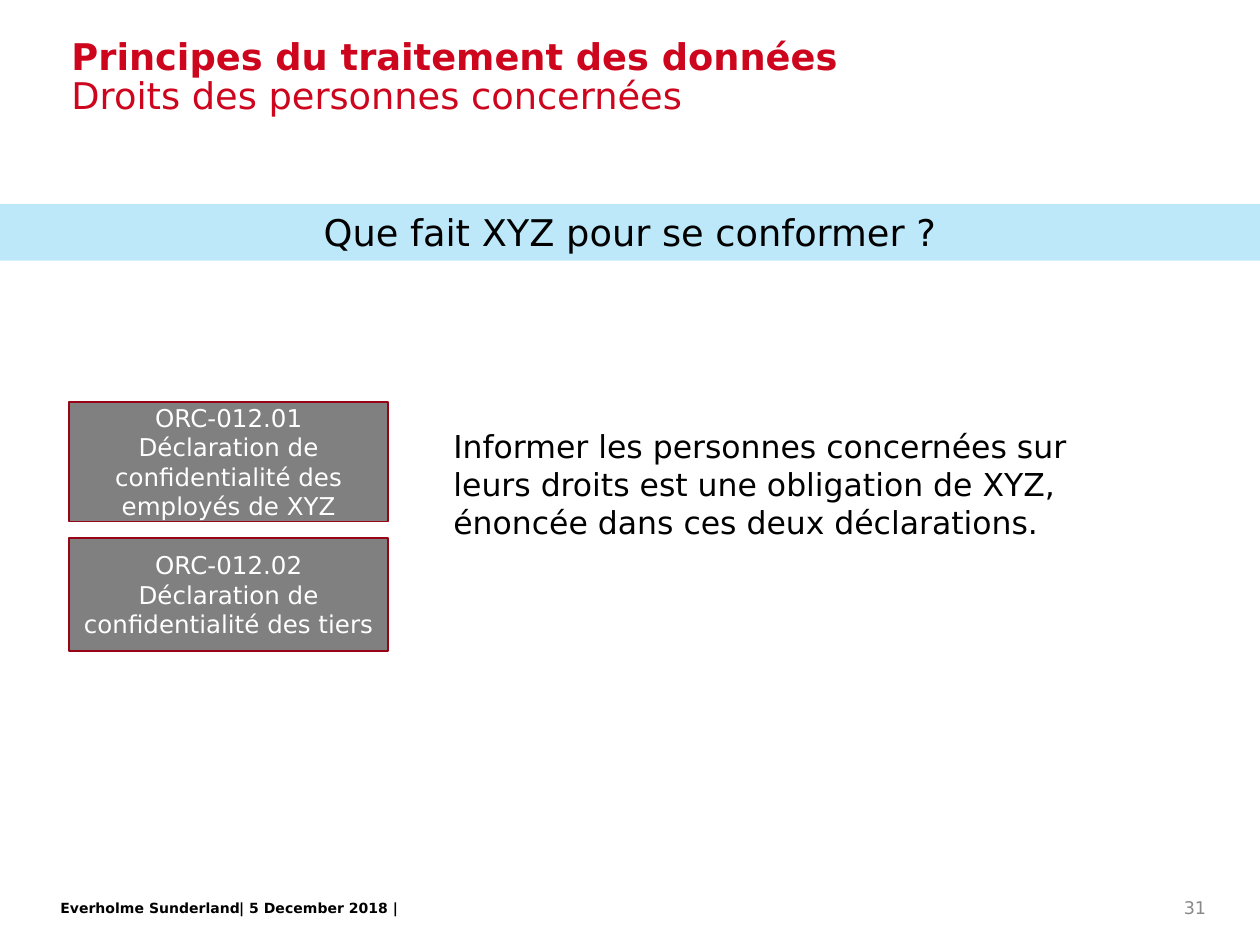
from pptx import Presentation
from pptx.dml.color import RGBColor
from pptx.enum.shapes import MSO_SHAPE
from pptx.enum.text import MSO_ANCHOR, PP_ALIGN
from pptx.util import Pt

FONT = "DejaVu Sans"
RED, BLACK, WHITE = "CD051D", "000000", "FFFFFF"


def color(value):
    return RGBColor.from_string(value)


def write(shape, lines, align=PP_ALIGN.LEFT, anchor=MSO_ANCHOR.TOP, **font_format):
    """Fill one paragraph with (text, bold) lines parted by line breaks."""
    shape.text_frame.word_wrap = True
    shape.text_frame.vertical_anchor = anchor
    paragraph = shape.text_frame.paragraphs[0]
    paragraph.alignment = align
    for index, (text, bold) in enumerate(lines):
        if index:
            paragraph.add_line_break()
        run = paragraph.add_run()
        run.text = text
        run.font.color.rgb = color(font_format["color"])
        for name, value in {"name": FONT, "size": Pt(font_format["size"]), "bold": bold}.items():
            setattr(run.font, name, value)
    return paragraph


presentation = Presentation()
presentation.slide_width, presentation.slide_height = Pt(720), Pt(540)
slide = presentation.slides.add_slide(presentation.slide_layouts[6])

# Text boxes: position, lines, format
title_lines = [("Principes du traitement des données", True),
               ("Droits des personnes concernées", False)]
message = ("Informer les personnes concernées sur leurs droits est une obligation "
           "de XYZ, énoncée dans ces deux déclarations.")
footer = {"size": 8, "color": BLACK}
texts = [
    ((27.4, 510.5, 124.6, 17.3), [("Everholme Sunderland", True)], footer),
    ((129.6, 510.5, 118, 17.3), [("| 5 December 2018 |", True)], footer),
    ((633.6, 507.6, 62.6, 21.6), [("31", False)],
     {"size": 10, "color": "898989", "align": PP_ALIGN.RIGHT, "anchor": MSO_ANCHOR.MIDDLE}),
    ((33.8, 31.7, 652.3, 25.9), title_lines,
     {"size": 21, "color": RED, "anchor": MSO_ANCHOR.MIDDLE}),
    ((252, 240.5, 383, 72.7), [(message, False)], {"size": 18, "color": BLACK}),
]
for position, lines, text_format in texts:
    text_box = slide.shapes.add_textbox(*map(Pt, position))
    paragraph = write(text_box, lines, **text_format)
    if lines is title_lines:
        paragraph.line_spacing = 0.9

# Declaration boxes and the question band: position, text, fill, line, format
declaration = {"size": 14, "color": WHITE, "anchor": MSO_ANCHOR.MIDDLE}
rectangles = [
    ((39.6, 229.7, 182.2, 68.4), "ORC-012.01 Déclaration de confidentialité des employés de XYZ",
     "808080", "980415", declaration),
    ((39.6, 307.4, 182.2, 64.8), "ORC-012.02 Déclaration de confidentialité des tiers",
     "808080", "980415", declaration),
    ((0, 116.6, 720, 32.4), "Que fait XYZ pour se conformer ?",
     "BDE8FA", None, {"size": 21, "color": BLACK}),
]
for position, text, fill, line, text_format in rectangles:
    rectangle = slide.shapes.add_shape(MSO_SHAPE.RECTANGLE, *map(Pt, position))
    rectangle.shadow.inherit = False
    rectangle.fill.solid()
    rectangle.fill.fore_color.rgb = color(fill)
    if line:
        rectangle.line.color.rgb = color(line)
        rectangle.line.width = Pt(1)
    else:
        rectangle.line.fill.background()
    write(rectangle, [(text, False)], align=PP_ALIGN.CENTER, **text_format)

presentation.save("out.pptx")
